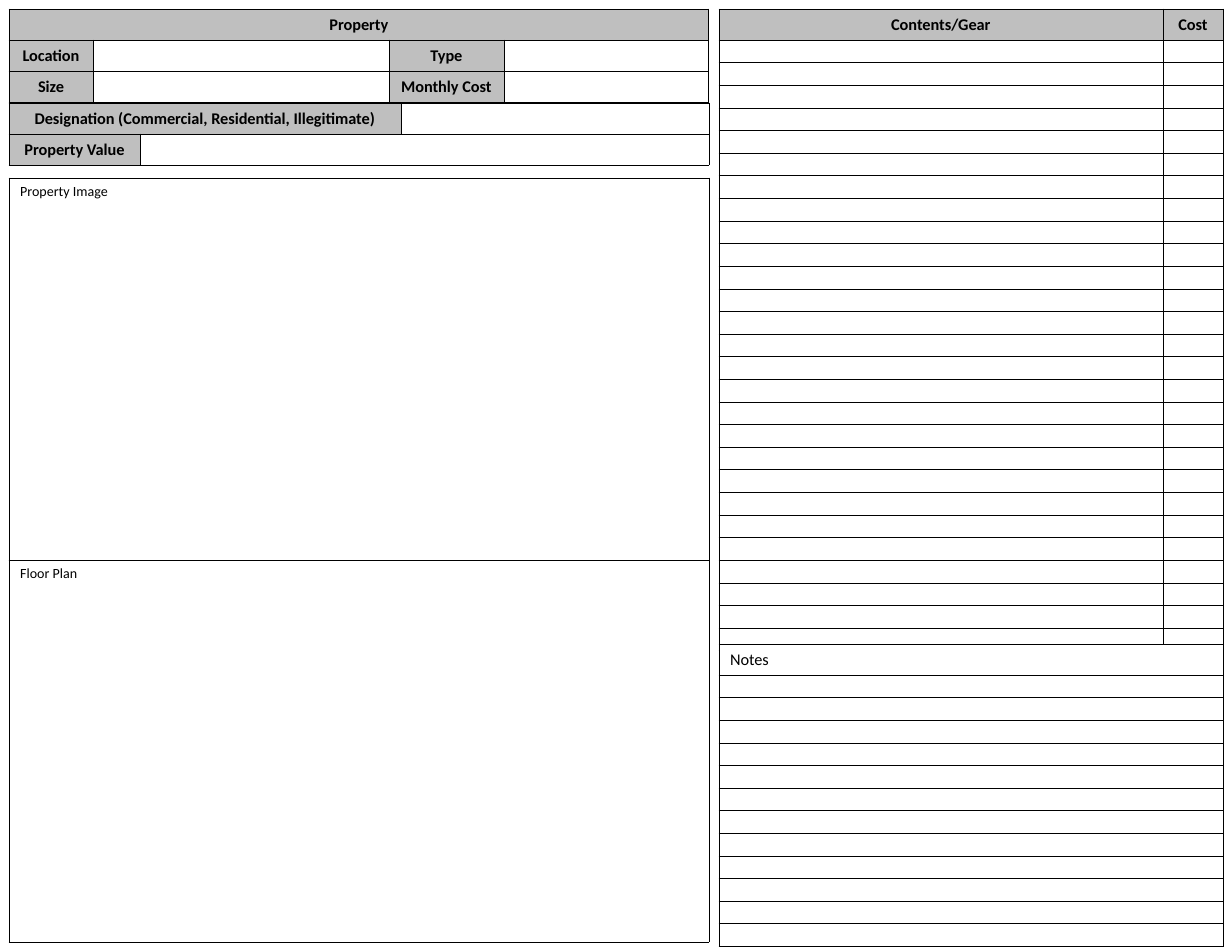
import pptx
import pptx.dml.color
import pptx.enum.text
import pptx.util
from lxml import etree

PX = 914400 // 112
COLORS = {"ink": "000000", "label": "BFBFBF", "blank": "FFFFFF"}
LEFT, RIGHT = 9, 719
LABEL_ROW, RULED_ROW, PANEL_ROW = 21, 17, 382
A = "http://schemas.openxmlformats.org/drawingml/2006/main"


def style_cell(cell, text, size, is_label):
    """Border and fill a cell; a small end mark keeps blank rows low."""
    properties = cell._tc.get_or_add_tcPr()
    for side in ("lnL", "lnR", "lnT", "lnB"):
        border = etree.SubElement(properties, f"{{{A}}}{side}", w="6350")
        line_fill = etree.SubElement(border, f"{{{A}}}solidFill")
        etree.SubElement(line_fill, f"{{{A}}}srgbClr", val=COLORS["ink"])
    cell.fill.solid()
    cell.fill.fore_color.rgb = pptx.dml.color.RGBColor.from_string(
        COLORS["label" if is_label else "blank"])
    paragraph = cell.text_frame.paragraphs[0]
    if not text:
        paragraph._p.get_or_add_endParaRPr().set("sz", "600")
        return
    paragraph.text = text
    if is_label:
        paragraph.alignment = pptx.enum.text.PP_ALIGN.CENTER
    font = paragraph.runs[0].font
    font.name = "Calibri"
    font.size = pptx.util.Pt(size)
    font.bold = is_label
    font.color.rgb = pptx.dml.color.RGBColor.from_string(COLORS["ink"])


def add_form(x, y, widths, heights, texts, merges=(), size=10.5, labels=True):
    """Add a bordered table; texts maps (row, column) to wording."""
    table = slide.shapes.add_table(
        len(heights), len(widths), x * PX, y * PX,
        sum(widths) * PX, sum(heights) * PX).table
    table.first_row = False
    table.horz_banding = False
    for column, width in zip(table.columns, widths):
        column.width = width * PX
    for row, height in zip(table.rows, heights):
        row.height = height * PX
    for row, first, last in merges:
        table.cell(row, first).merge(table.cell(row, last))
    for row in range(len(heights)):
        for column in range(len(widths)):
            text = texts.get((row, column))
            style_cell(table.cell(row, column), text, size, labels and bool(text))


presentation = pptx.Presentation()
presentation.slide_width = pptx.util.Inches(11)
presentation.slide_height = pptx.util.Inches(8.5)
slide = presentation.slides.add_slide(presentation.slide_layouts[6])

# Property details
add_form(LEFT, 9, [84, 296, 115, 205], [LABEL_ROW] * 3,
         {(0, 0): "Property",
          (1, 0): "Location", (1, 2): "Type",
          (2, 0): "Size", (2, 2): "Monthly Cost"},
         merges=[(0, 0, 3)])
add_form(LEFT, 103, [131, 261, 308], [LABEL_ROW] * 2,
         {(0, 0): "Designation (Commercial, Residential, Illegitimate)",
          (1, 0): "Property Value"},
         merges=[(0, 0, 1), (1, 1, 2)])

# Drawing panels
for position, caption in enumerate(["Property Image", "Floor Plan"]):
    add_form(LEFT, 178 + position * PANEL_ROW, [700], [PANEL_ROW],
             {(0, 0): caption}, size=9, labels=False)

# Inventory and notes
add_form(RIGHT, 9, [444, 60], [RULED_ROW] * 28,
         {(0, 0): "Contents/Gear", (0, 1): "Cost"})
add_form(RIGHT, 644, [504], [RULED_ROW] * 13, {(0, 0): "Notes"}, labels=False)

presentation.save("out.pptx")
